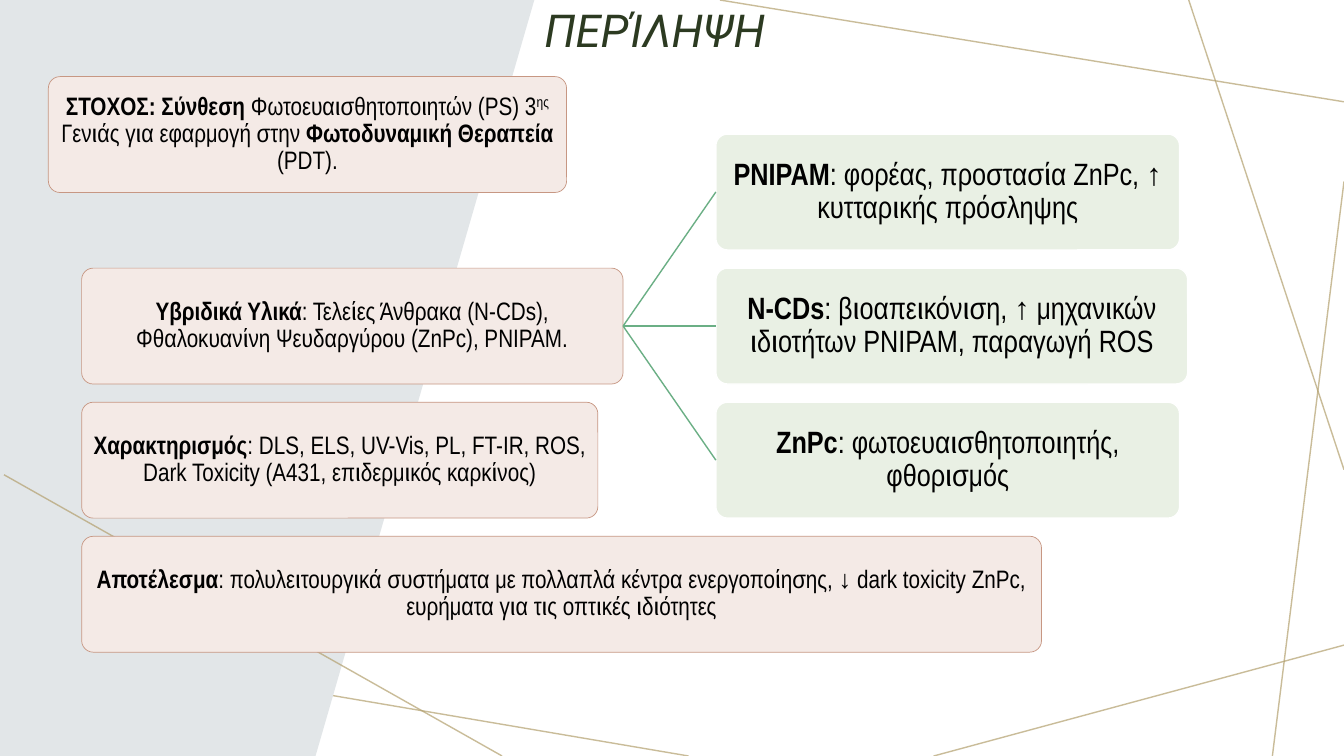
from dataclasses import dataclass

from lxml import etree
from pptx import Presentation
from pptx.dml.color import RGBColor
from pptx.enum.shapes import MSO_CONNECTOR, MSO_SHAPE
from pptx.enum.text import MSO_ANCHOR, PP_ALIGN
from pptx.oxml.ns import qn
from pptx.util import Pt

STRAIGHT = MSO_CONNECTOR.STRAIGHT
ROUNDED = MSO_SHAPE.ROUNDED_RECTANGLE
MIDDLE = MSO_ANCHOR.MIDDLE
CENTER = PP_ALIGN.CENTER
LEFT_SIDE, RIGHT_SIDE = 1, 3

PX = 9144  # EMU in one px, 100 px to the inch
WIDTH, HEIGHT = 1333, 750
BOX_H, ROW_TOP, ROW_STEP = 115, 266, 133

BLACK = RGBColor(0x00, 0x00, 0x00)
WHITE = RGBColor(0xFF, 0xFF, 0xFF)
GOLD = RGBColor(0xB3, 0xA0, 0x6E)
GREY = RGBColor(0xE2, 0xE6, 0xE8)
DARK_GREEN = RGBColor(0x2C, 0x3A, 0x21)
GREEN = RGBColor(0x6B, 0xAF, 0x85)
PALE_GREEN = RGBColor(0xE9, 0xF0, 0xE4)
PINK = RGBColor(0xF4, 0xEA, 0xE6)
BROWN = RGBColor(0xC7, 0x97, 0x83)


@dataclass(frozen=True)
class Style:
    fill: RGBColor
    line: RGBColor
    line_pt: float
    text_pt: int


@dataclass(frozen=True)
class Box:
    left: int
    top: int
    width: int
    style: Style
    text: str  # pieces split by "|": bold and regular in turn
    superscript: str = ""


TOPIC = Style(PINK, BROWN, 0.5, 18)
DETAIL = Style(PALE_GREEN, WHITE, 1, 22)

GOAL = Box(48, 76, 514, TOPIC,
           "ΣΤΟΧΟΣ: Σύνθεση |Φωτοευαισθητοποιητών (PS) 3^ Γενιάς για εφαρμογή "
           "στην |Φωτοδυναμική Θεραπεία| (PDT).", "ης")
HYBRID = Box(81, ROW_TOP, 537, TOPIC,
             "Υβριδικά Υλικά|: Τελείες Άνθρακα (N-CDs), "
             "Φθαλοκυανίνη Ψευδαργύρου (ZnPc), PNIPAM.")
CHARACTERISATION = Box(81, ROW_TOP + ROW_STEP, 512, TOPIC,
                       "Χαρακτηρισμός|: DLS, ELS, UV-Vis, PL, FT-IR, ROS, "
                       "Dark Toxicity (Α431, επιδερμικός καρκίνος)")
RESULT = Box(81, ROW_TOP + 2 * ROW_STEP, 952, TOPIC,
             "Αποτέλεσμα|: πολυλειτουργικά συστήματα με πολλαπλά κέντρα "
             "ενεργοποίησης, ↓ dark toxicity ZnPc, "
             "ευρήματα για τις οπτικές ιδιότητες")
MATERIALS = [
    Box(710, ROW_TOP - ROW_STEP, 460, DETAIL,
        "PNIPAM|: φορέας, προστασία ZnPc, ↑ κυτταρικής πρόσληψης"),
    Box(710, ROW_TOP, 468, DETAIL,
        "N-CDs|: βιοαπεικόνιση, ↑ μηχανικών ιδιοτήτων ΡΝΙΡΑΜ, παραγωγή ROS"),
    Box(710, ROW_TOP + ROW_STEP, 460, DETAIL,
        "ZnPc|: φωτοευαισθητοποιητής, φθορισμός"),
]

# Decorative lines: x1, y1, x2, y2
LINES_BEHIND = [
    (683, 750, 0, 634),
    (1333, 640, 926, 750),
    (1333, 180, 1262, 750),
    (1333, 466, 1179, 0),
    (1333, 101, 714, 0),
]
LINE_OVER_WEDGE = (4, 471, 498, 750)
WEDGE = [(0, 0), (530, 0), (313, HEIGHT), (0, HEIGHT)]


def add_line(s, ends, color: RGBColor, alpha: int = 100):
    c = s.shapes.add_connector(STRAIGHT, *(v * PX for v in ends))
    c.line.color.rgb = color
    c.line.width = Pt(1)
    sp_pr = c._element.spPr
    if alpha < 100:
        clr = next(sp_pr.iter(qn("a:srgbClr")))
        etree.SubElement(clr, qn("a:alpha")).set("val", str(alpha * 1000))
    etree.SubElement(sp_pr, qn("a:effectLst"))
    return c


def add_wedge(s) -> None:
    builder = s.shapes.build_freeform(*WEDGE[0], scale=PX)
    builder.add_line_segments(WEDGE[1:], close=True)
    sp = builder.convert_to_shape()
    sp.shadow.inherit = False
    sp.fill.solid()
    sp.fill.fore_color.rgb = GREY
    sp.line.fill.background()


def add_title(s) -> None:
    sp = s.shapes.add_textbox(530 * PX, 5 * PX, 272 * PX, 55 * PX)
    tf = sp.text_frame
    tf.word_wrap = True
    tf.vertical_anchor = MIDDLE
    tf.text = "ΠΕΡΊΛΗΨΗ"
    p = tf.paragraphs[0]
    p.line_spacing = 0.9
    font = p.runs[0].font
    font.name, font.size, font.italic = "Roboto", Pt(32.4), True
    font.color.rgb = DARK_GREEN


def add_run(p, text: str, size: int, bold: bool):
    r = p.add_run()
    r.text = text
    r.font.name, r.font.size, r.font.bold = "Arial Narrow", Pt(size), bold
    r.font.color.rgb = BLACK
    return r


def add_box(s, box: Box):
    style = box.style
    sp = s.shapes.add_shape(ROUNDED, box.left * PX, box.top * PX,
                            box.width * PX, BOX_H * PX)
    sp.adjustments[0] = 0.1
    sp.shadow.inherit = False
    sp.fill.solid()
    sp.fill.fore_color.rgb = style.fill
    sp.line.color.rgb = style.line
    sp.line.width = Pt(style.line_pt)

    tf = sp.text_frame
    tf.word_wrap = True
    tf.vertical_anchor = MIDDLE
    tf.margin_left = tf.margin_right = tf.margin_top = tf.margin_bottom = 2 * PX
    p = tf.paragraphs[0]
    p.alignment = CENTER
    p.line_spacing = 0.9
    for i, piece in enumerate(box.text.split("|")):
        before, mark, after = piece.partition("^")
        add_run(p, before, style.text_pt, i % 2 == 0)
        if mark:
            r = add_run(p, box.superscript, style.text_pt, False)
            r._r.get_or_add_rPr().set("baseline", "30000")
            add_run(p, after, style.text_pt, False)
    return sp


def main() -> None:
    prs = Presentation()
    prs.slide_width, prs.slide_height = WIDTH * PX, HEIGHT * PX
    s = prs.slides.add_slide(prs.slide_layouts[6])

    # Background
    for ends in LINES_BEHIND:
        add_line(s, ends, GOLD, 70)
    add_wedge(s)
    add_line(s, LINE_OVER_WEDGE, GOLD, 70)

    add_title(s)

    # Goal, and hybrid materials with their three branches
    add_box(s, GOAL)
    hybrid = add_box(s, HYBRID)
    for material in MATERIALS:
        target = add_box(s, material)
        c = add_line(s, (0, 0, 0, 0), GREEN)
        c.begin_connect(hybrid, RIGHT_SIDE)
        c.end_connect(target, LEFT_SIDE)

    # Characterisation and result
    add_box(s, CHARACTERISATION)
    add_box(s, RESULT)

    prs.save("out.pptx")


if __name__ == "__main__":
    main()
